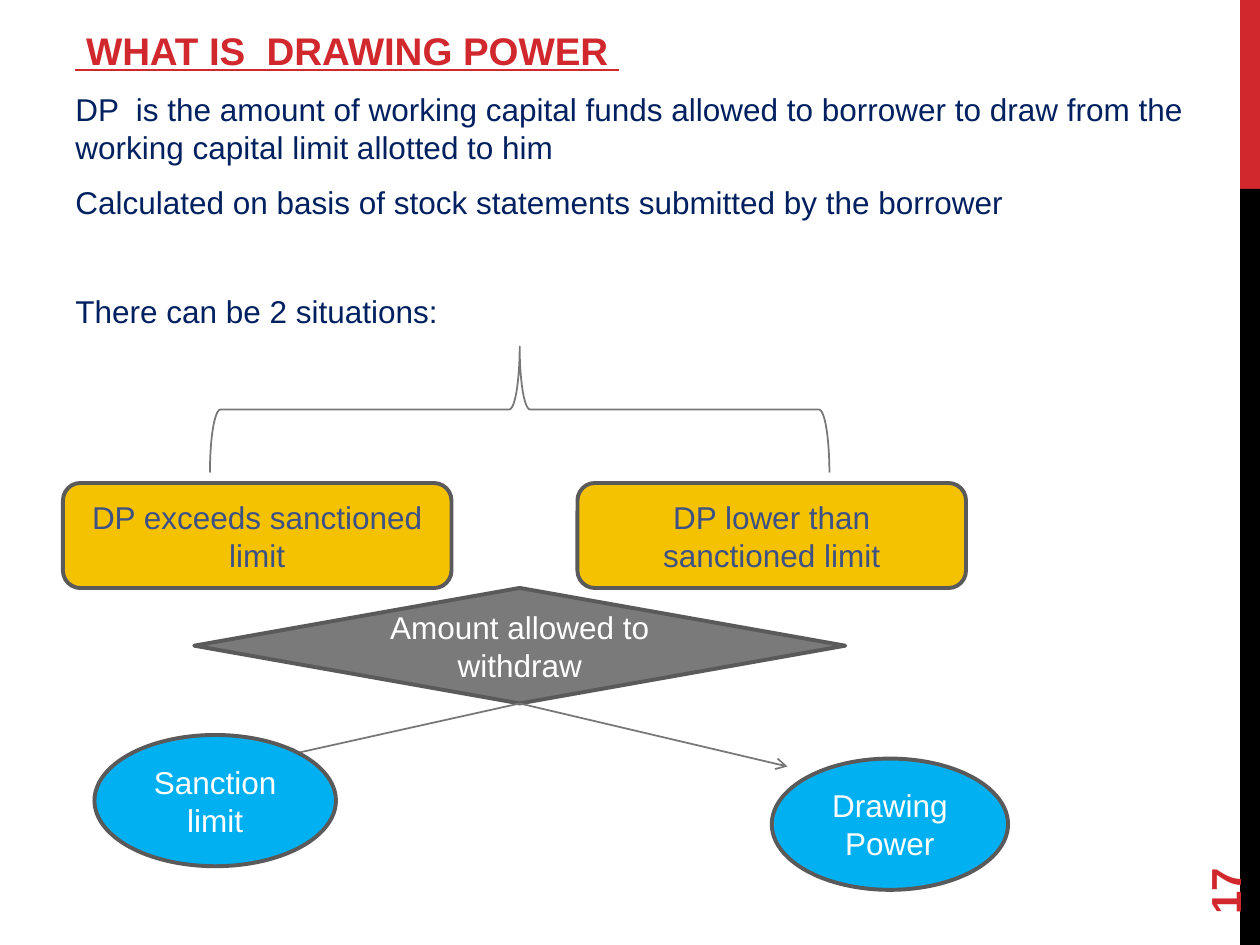
from typing import NamedTuple

from lxml import etree
from pptx import Presentation
from pptx.dml.color import RGBColor
from pptx.enum.shapes import MSO_CONNECTOR, MSO_SHAPE
from pptx.enum.text import MSO_ANCHOR, PP_ALIGN
from pptx.oxml.ns import qn
from pptx.util import Inches, Pt

RECTANGLE, ROUNDED = MSO_SHAPE.RECTANGLE, MSO_SHAPE.ROUNDED_RECTANGLE
DECISION, ELLIPSE = MSO_SHAPE.FLOWCHART_DECISION, MSO_SHAPE.OVAL
BRACE, STRAIGHT = MSO_SHAPE.RIGHT_BRACE, MSO_CONNECTOR.STRAIGHT
MIDDLE, CENTER = MSO_ANCHOR.MIDDLE, PP_ALIGN.CENTER

RED = RGBColor(0xD1, 0x28, 0x2E)
BLACK = RGBColor(0x00, 0x00, 0x00)
WHITE = RGBColor(0xFF, 0xFF, 0xFF)
NAVY = RGBColor(0x00, 0x20, 0x60)
GOLD = RGBColor(0xF5, 0xC2, 0x01)
SLATE = RGBColor(0x3D, 0x51, 0x85)
GREY = RGBColor(0x7A, 0x7A, 0x7A)
OUTLINE = RGBColor(0x5A, 0x5A, 0x5A)
THIN_LINE = RGBColor(0x77, 0x77, 0x77)
SKY = RGBColor(0x00, 0xB0, 0xF0)

FONT = "Arial"
COLUMNS, ROWS = 120, 90
CELL = Inches(10) / COLUMNS


def cells(count):
    return round(count * CELL)


class Box(NamedTuple):
    """An area measured in grid cells."""
    left: float
    top: float
    width: float
    height: float

    def inner(self, left, top, width, height):
        return Box(self.left + left, self.top + top, width, height)

    def turned(self):
        """The box that fills this one after a quarter turn."""
        return Box(self.left + (self.width - self.height) / 2,
                   self.top + (self.height - self.width) / 2,
                   self.height, self.width)

    def lengths(self):
        return [cells(side) for side in self]


def style_font(paragraph, size, color, bold=False, underline=False):
    font = paragraph.font
    font.name, font.size, font.bold = FONT, Pt(size), bold
    font.underline = underline
    font.color.rgb = color


def add_figure(slide, preset, box, fill=None, outline=None, weight=2.25):
    figure = slide.shapes.add_shape(preset, *box.lengths())
    figure.shadow.inherit = False
    if fill is None:
        figure.fill.background()
    else:
        figure.fill.solid()
        figure.fill.fore_color.rgb = fill
    if outline is None:
        figure.line.fill.background()
    else:
        figure.line.color.rgb = outline
        figure.line.width = Pt(weight)
    return figure


def add_node(slide, preset, box, label, fill, color=WHITE):
    frame = add_figure(slide, preset, box, fill, OUTLINE).text_frame
    frame.word_wrap = True
    frame.vertical_anchor = MIDDLE
    paragraph = frame.paragraphs[0]
    paragraph.text = label
    paragraph.alignment = CENTER
    style_font(paragraph, 18, color)


def add_arrow(slide, start, end):
    arrow = slide.shapes.add_connector(
        STRAIGHT, *[cells(place) for place in (*start, *end)])
    arrow.line.color.rgb = THIN_LINE
    arrow.line.width = Pt(1)
    properties = arrow._element.spPr
    etree.SubElement(properties.find(qn("a:ln")), qn("a:tailEnd"), type="arrow")
    etree.SubElement(properties, qn("a:effectLst"))


def add_side_rail(slide, box):
    red_height = box.height / 5
    add_figure(slide, RECTANGLE, box.inner(0, 0, box.width, red_height), RED)
    add_figure(slide, RECTANGLE,
               box.inner(0, red_height, box.width, box.height - red_height), BLACK)


def add_explanation(slide, box):
    frame = slide.shapes.add_textbox(*box.lengths()).text_frame
    frame.word_wrap = True
    heading = frame.paragraphs[0]
    heading.text = " WHAT IS  DRAWING POWER "
    heading.space_after = Pt(6)
    style_font(heading, 22, RED, bold=True, underline=True)
    statements = [
        ("DP  is the amount of working capital funds allowed to borrower "
         "to draw from the working capital limit allotted to him", 3.6),
        ("Calculated on basis of stock statements submitted by the borrower", 3.6),
        ("There can be 2 situations:", 35),
    ]
    for statement, gap in statements:
        paragraph = frame.add_paragraph()
        paragraph.text = statement
        paragraph.space_before, paragraph.space_after = Pt(gap), Pt(6)
        style_font(paragraph, 18, NAVY)


def add_page_number(slide, box, number):
    holder = slide.shapes.add_textbox(*box.turned().lengths())
    holder.rotation = 270
    frame = holder.text_frame
    frame.word_wrap = True
    frame.vertical_anchor = MIDDLE
    frame.paragraphs[0].text = number
    style_font(frame.paragraphs[0], 24, RED, bold=True)


def add_situations(slide, box):
    """Brace, two situations, the decision and its two outcomes."""
    brace = add_figure(slide, BRACE, box.inner(14, 0, 59, 12).turned(),
                       outline=THIN_LINE, weight=1)
    brace.rotation = 270

    situations = ["DP exceeds sanctioned limit", "DP lower than sanctioned limit"]
    for index, situation in enumerate(situations):
        add_node(slide, ROUNDED, box.inner(49 * index, 13, 37, 10),
                 situation, GOLD, SLATE)

    decision = box.inner(12.5, 23, 62, 11)
    add_node(slide, DECISION, decision, "Amount allowed to withdraw", GREY)

    fork = (decision.left + decision.width / 2, decision.top + decision.height)
    outcomes = [
        ("Sanction limit", box.inner(3, 37, 23, 12.5), (21, 39)),
        ("Drawing Power", box.inner(67.5, 39.25, 22.5, 12.5), (69, 40)),
    ]
    for _, _, (across, down) in outcomes:
        add_arrow(slide, fork, (box.left + across, box.top + down))
    for outcome, place, _ in outcomes:
        add_node(slide, ELLIPSE, place, outcome, SKY)


def main():
    deck = Presentation()
    deck.slide_width, deck.slide_height = cells(COLUMNS), cells(ROWS)
    slide = deck.slides.add_slide(deck.slide_layouts[6])
    add_side_rail(slide, Box(118.1, 0, 1.9, ROWS))
    add_explanation(slide, Box(6, 2, 108, 78.4))
    add_page_number(slide, Box(114.2, 71, 4.8, 17.3), "17")
    add_situations(slide, Box(6, 33, 90, 52))
    deck.save("out.pptx")


if __name__ == "__main__":
    main()
